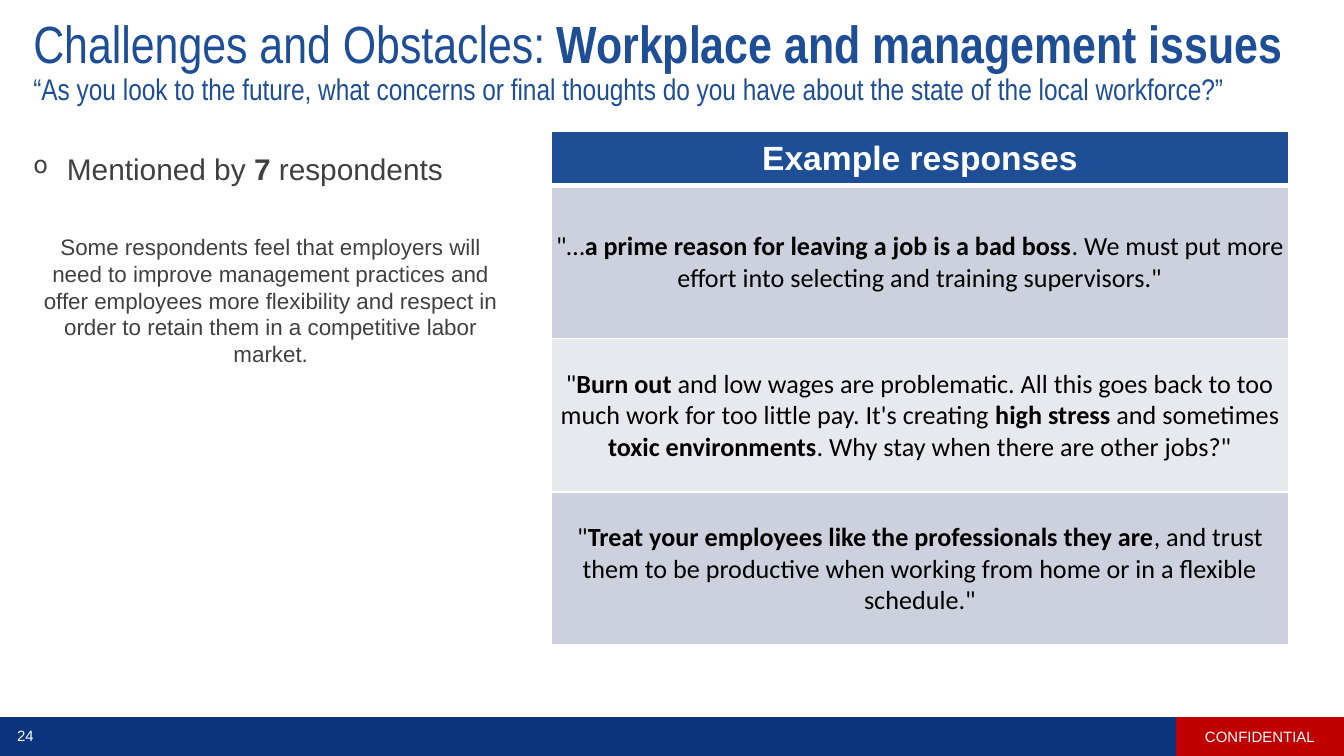
from dataclasses import dataclass

from lxml import etree
from pptx import Presentation
from pptx.dml.color import RGBColor
from pptx.enum.shapes import MSO_SHAPE
from pptx.enum.text import MSO_ANCHOR, PP_ALIGN
from pptx.oxml.ns import qn
from pptx.util import Inches, Pt

RECTANGLE = MSO_SHAPE.RECTANGLE
TOP, MIDDLE = MSO_ANCHOR.TOP, MSO_ANCHOR.MIDDLE
LEFT, CENTER = PP_ALIGN.LEFT, PP_ALIGN.CENTER

SLIDE_WIDTH = 10
SLIDE_HEIGHT = SLIDE_WIDTH * 9 / 16
MARGIN = 0.15
FOOTER_HEIGHT = 0.29
FOOTER_TOP = SLIDE_HEIGHT - FOOTER_HEIGHT
LABEL_WIDTH = SLIDE_WIDTH / 8
TABLE_BOX = (4.1, 0.98, 5.49)
HEADER_ROW, QUOTE_ROW = 0.39, 1.14


@dataclass(frozen=True)
class Theme:
    blue: str = "1E4E96"
    navy: str = "0A357E"
    red: str = "C00000"
    white: str = "FFFFFF"
    black: str = "000000"
    grey: str = "404040"
    bands: tuple = ("CDD0DD", "E8E9EF")
    title_font: str = "Arial Narrow"
    body_font: str = "Arial"
    quote_font: str = "Calibri"
    title_size: int = 28
    header_size: int = 18
    lead_size: int = 16
    quote_size: int = 14
    body_size: int = 12
    footer_size: int = 8


THEME = Theme()

# Words between double asterisks are bold.
TITLE = "Challenges and Obstacles: **Workplace and management issues**"
QUESTION = ("“As you look to the future, what concerns or final thoughts "
            "do you have about the state of the local workforce?”")
MENTIONS = "Mentioned by **7** respondents"
SUMMARY = ("Some respondents feel that employers will need to improve management "
           "practices and offer employees more flexibility and respect in order "
           "to retain them in a competitive labor market.")
TABLE_HEADER = "**Example responses**"
QUOTES = [
    '"…**a prime reason for leaving a job is a bad boss**. We must put more '
    'effort into selecting and training supervisors."',
    '"**Burn out **and low wages are problematic. All this goes back to too much '
    "work for too little pay. It's creating **high stress **and sometimes "
    '**toxic environments**. Why stay when there are other jobs?"',
    '"**Treat your employees like the professionals they are**, and trust them to '
    'be productive when working from home or in a flexible schedule."',
]


def write(paragraph, text, *, size, color, font=THEME.body_font, align=LEFT):
    """Add text to a paragraph, with the parts between ** in bold."""
    paragraph.alignment = align
    for index, part in enumerate(text.split("**")):
        if part:
            run = paragraph.add_run()
            run.text = part
            run.font.name = font
            run.font.size = Pt(size)
            run.font.bold = index % 2 == 1
            run.font.color.rgb = RGBColor.from_string(color)


def add_text_frame(slide, box, *, anchor=TOP, insets=(0.1, 0.05, 0.1, 0.05)):
    frame = slide.shapes.add_textbox(*map(Inches, box)).text_frame
    frame.word_wrap = True
    frame.vertical_anchor = anchor
    set_margins(frame, insets)
    return frame


def set_margins(target, insets):
    (target.margin_left, target.margin_top,
     target.margin_right, target.margin_bottom) = map(Inches, insets)


def add_bar(slide, box, color):
    bar = slide.shapes.add_shape(RECTANGLE, *map(Inches, box))
    bar.shadow.inherit = False
    bar.fill.solid()
    bar.fill.fore_color.rgb = RGBColor.from_string(color)
    bar.line.fill.background()
    bar.text_frame.vertical_anchor = MIDDLE
    return bar


def add_bullet(paragraph, character, indent, percent):
    properties = paragraph._p.get_or_add_pPr()
    properties.set("marL", str(Inches(indent)))
    properties.set("indent", str(-Inches(indent)))
    etree.SubElement(properties, qn("a:buSzPct"), val=str(percent * 1000))
    etree.SubElement(properties, qn("a:buChar"), char=character)


def style_cell(cell, fill, insets, bottom_width=1):
    """Set the margins, white borders and fill of a table cell."""
    cell.vertical_anchor = MIDDLE
    set_margins(cell, insets)
    properties = cell._tc.get_or_add_tcPr()
    for side, width in (("L", 1), ("R", 1), ("T", 1), ("B", bottom_width)):
        line = etree.SubElement(properties, qn(f"a:ln{side}"), w=str(Pt(width)))
        solid = etree.SubElement(line, qn("a:solidFill"))
        etree.SubElement(solid, qn("a:srgbClr"), val=THEME.white)
    cell.fill.solid()
    cell.fill.fore_color.rgb = RGBColor.from_string(fill)


def add_title(slide):
    frame = add_text_frame(slide, (MARGIN, MARGIN, 9.67, 0.63), anchor=MIDDLE,
                           insets=(0.1, 0.1, 0.2, 0.1))
    paragraph = frame.paragraphs[0]
    paragraph.line_spacing = 0.9
    look = {"color": THEME.blue, "font": THEME.title_font}
    write(paragraph, TITLE, size=THEME.title_size, **look)
    paragraph.add_line_break()
    write(paragraph, QUESTION, size=THEME.lead_size, **look)


def add_findings(slide):
    frame = add_text_frame(slide, (MARGIN, 1.07, 3.73, 2.7))
    lead = frame.paragraphs[0]
    add_bullet(lead, "o", indent=0.25, percent=80)
    write(lead, MENTIONS, size=THEME.lead_size, color=THEME.grey)
    summary = frame.add_paragraph()
    summary.space_before = Pt(25)
    write(summary, SUMMARY, size=THEME.body_size, color=THEME.grey, align=CENTER)


def add_responses(slide):
    heights = [HEADER_ROW] + [QUOTE_ROW] * len(QUOTES)
    box = (*TABLE_BOX, sum(heights))
    table = slide.shapes.add_table(len(heights), 1, *map(Inches, box)).table
    table.horz_banding = False
    for row, height in zip(table.rows, heights):
        row.height = Inches(height)

    header = table.cell(0, 0)
    style_cell(header, THEME.blue, (0.1, 0.05, 0.1, 0.05), bottom_width=3)
    write(header.text_frame.paragraphs[0], TABLE_HEADER, size=THEME.header_size,
          color=THEME.white, align=CENTER)
    for index, quote in enumerate(QUOTES):
        cell = table.cell(index + 1, 0)
        style_cell(cell, THEME.bands[index % 2], (0.01, 0.01, 0.01, 0))
        write(cell.text_frame.paragraphs[0], quote, size=THEME.quote_size,
              color=THEME.black, font=THEME.quote_font, align=CENTER)


def add_footer(slide):
    add_bar(slide, (0, FOOTER_TOP, SLIDE_WIDTH, FOOTER_HEIGHT), THEME.navy)
    label = add_bar(slide, (SLIDE_WIDTH - LABEL_WIDTH, FOOTER_TOP, LABEL_WIDTH,
                            FOOTER_HEIGHT), THEME.red)
    number = add_text_frame(slide, (0, 5.35, 0.38, 0.24), anchor=MIDDLE)
    for frame, text in ((label.text_frame, "CONFIDENTIAL"), (number, "24")):
        write(frame.paragraphs[0], text, size=THEME.footer_size,
              color=THEME.white, align=CENTER)


def main():
    presentation = Presentation()
    presentation.slide_width = Inches(SLIDE_WIDTH)
    presentation.slide_height = Inches(SLIDE_HEIGHT)
    slide = presentation.slides.add_slide(presentation.slide_layouts[6])
    add_footer(slide)
    add_title(slide)
    add_responses(slide)
    add_findings(slide)
    presentation.save("out.pptx")


if __name__ == "__main__":
    main()
